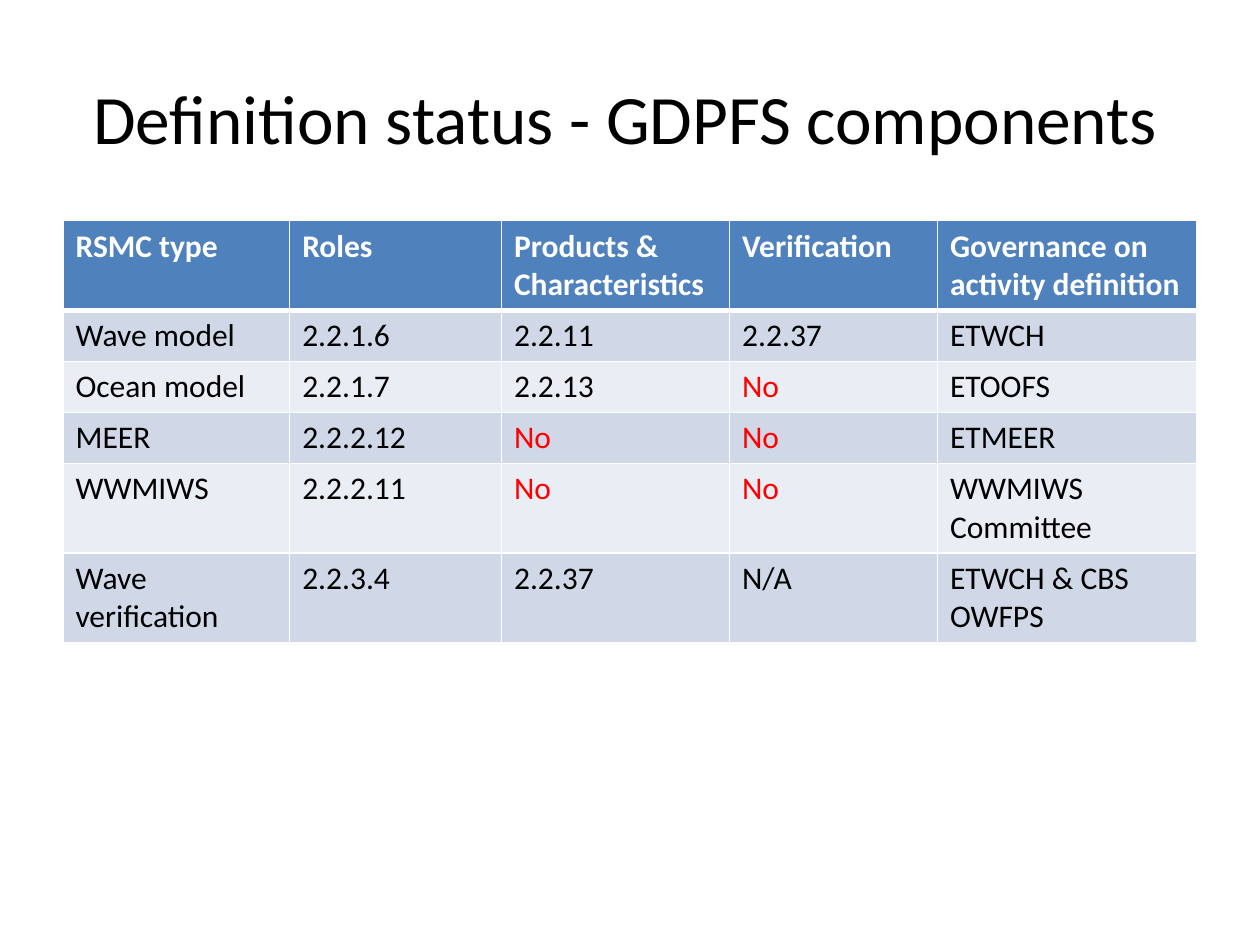
import pptx
import pptx.dml.color
import pptx.enum.text
import pptx.oxml
import pptx.oxml.ns
import pptx.util
from pptx.util import Cm

RGBColor = pptx.dml.color.RGBColor
BLACK = RGBColor(0x00, 0x00, 0x00)
WHITE = RGBColor(0xFF, 0xFF, 0xFF)
RED = RGBColor(0xFF, 0x00, 0x00)
HEADER_BLUE = RGBColor(0x4F, 0x81, 0xBD)
BAND_DARK = RGBColor(0xD0, 0xD8, 0xE8)
BAND_LIGHT = RGBColor(0xE9, 0xED, 0xF4)

FONT = "Calibri"
COLUMN_WIDTHS = [4.57, 4.27, 4.6, 4.19, 5.23]
ROW_HEIGHTS = [1.8, 1.03, 1.03, 1.03, 1.8, 1.8]
COMPONENTS = [
    ["RSMC type", "Roles", "Products & Characteristics", "Verification",
     "Governance on activity definition"],
    ["Wave model", "2.2.1.6", "2.2.11", "2.2.37", "ETWCH"],
    ["Ocean model", "2.2.1.7", "2.2.13", "No", "ETOOFS"],
    ["MEER", "2.2.2.12", "No", "No", "ETMEER"],
    ["WWMIWS", "2.2.2.11", "No", "No", "WWMIWS Committee"],
    ["Wave verification", "2.2.3.4", "2.2.37", "N/A", "ETWCH & CBS OWFPS"],
]


def add_run(paragraph, text, size, color, bold=False):
    run = paragraph.add_run()
    run.text = text
    run.font.name = FONT
    run.font.size = pptx.util.Pt(size)
    run.font.bold = bold
    run.font.color.rgb = color


def set_title(slide, text):
    title = slide.shapes.title
    title.left, title.top = Cm(0.71), Cm(0.76)
    title.width, title.height = Cm(23.8), Cm(3.18)
    frame = title.text_frame
    frame.word_wrap = True
    frame.vertical_anchor = pptx.enum.text.MSO_ANCHOR.MIDDLE
    heading = frame.paragraphs[0]
    heading.alignment = pptx.enum.text.PP_ALIGN.CENTER
    add_run(heading, text, 39.6, BLACK)


def set_border(cell, side, color, width):
    namespace = pptx.oxml.ns.nsdecls("a")
    border = pptx.oxml.parse_xml(
        f'<a:{side} {namespace} w="{pptx.util.Pt(width)}">'
        f'<a:solidFill><a:srgbClr val="{color}"/></a:solidFill></a:{side}>'
    )
    cell._tc.get_or_add_tcPr().append(border)


def fill_cell(cell, text, row_index):
    is_header = row_index == 0
    for side in ("lnL", "lnR", "lnT", "lnB"):
        beside_header_rule = (row_index, side) in ((0, "lnB"), (1, "lnT"))
        set_border(cell, side, WHITE, 3 if beside_header_rule else 1)
    band = BAND_DARK if row_index % 2 else BAND_LIGHT
    cell.fill.solid()
    cell.fill.fore_color.rgb = HEADER_BLUE if is_header else band
    body_color = RED if text == "No" else BLACK
    color = WHITE if is_header else body_color
    add_run(cell.text_frame.paragraphs[0], text, 18, color, is_header)


def add_status_table(slide):
    status = slide.shapes.add_table(
        len(ROW_HEIGHTS), len(COLUMN_WIDTHS), Cm(1.27), Cm(4.45),
        Cm(sum(COLUMN_WIDTHS)), Cm(sum(ROW_HEIGHTS)),
    ).table
    for column, width in zip(status.columns, COLUMN_WIDTHS):
        column.width = Cm(width)
    for row_index, (row, height) in enumerate(zip(status.rows, ROW_HEIGHTS)):
        row.height = Cm(height)
        for cell, text in zip(row.cells, COMPONENTS[row_index]):
            fill_cell(cell, text, row_index)


def main():
    presentation = pptx.Presentation()
    presentation.slide_width = Cm(25.4)
    presentation.slide_height = Cm(19.05)
    slide = presentation.slides.add_slide(presentation.slide_layouts[5])
    set_title(slide, "Definition status - GDPFS components")
    add_status_table(slide)
    presentation.save("out.pptx")


if __name__ == "__main__":
    main()
